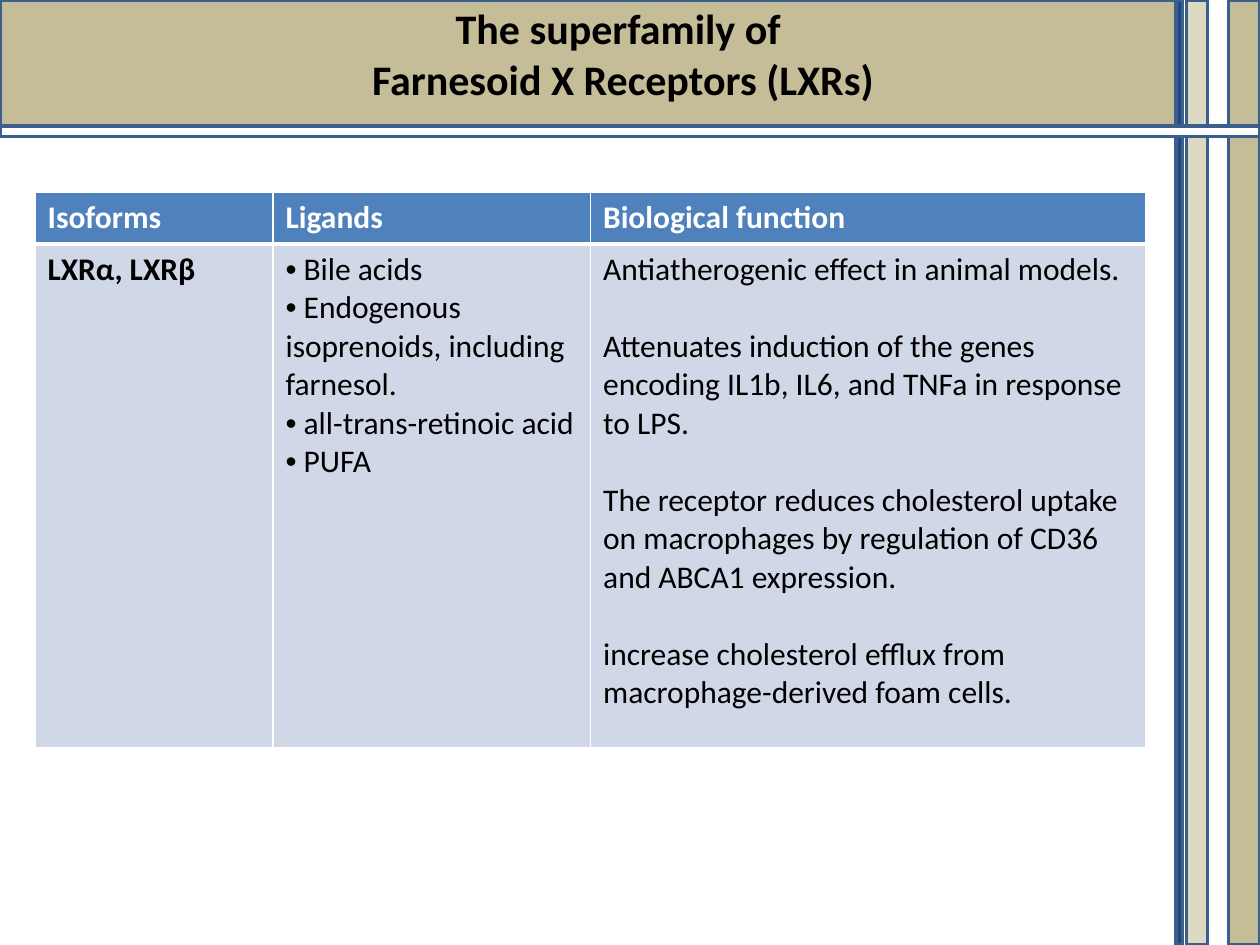
from typing import NamedTuple

from lxml.etree import SubElement
from pptx import Presentation
from pptx.dml.color import RGBColor
from pptx.enum.shapes import MSO_SHAPE
from pptx.enum.text import MSO_ANCHOR, MSO_AUTO_SIZE, PP_ALIGN
from pptx.oxml.ns import qn
from pptx.util import Pt

FONT = "Calibri"
BLACK = "000000"
WHITE = "FFFFFF"
OUTLINE = "3A5F8C"
HEADER_FILL = "4F81BD"
BODY_FILL = "D0D8E8"


class Bar(NamedTuple):
    left: float
    top: float
    width: float
    height: float
    fill: str


class Entry(NamedTuple):
    lines: list[str]
    bold: bool = False
    bulleted: bool = False
    gap: float = 0
    color: str = BLACK
    fill: str = BODY_FILL
    bottom: float = 1


BARS = [
    Bar(0, 0, 672, 72, "C4BD97"),
    Bar(702, 0, 18, 540, "C4BD97"),
    Bar(678, 0, 12, 540, "DDD9C3"),
    Bar(672, 0, 3.6, 540, "1F497D"),
    Bar(0, 72, 720, 6, WHITE),
]
COLUMN_WIDTHS = [136, 181.5, 317.5]
ROW_HEIGHTS = [29.5, 288]
HEADINGS = [
    Entry([heading], bold=True, color=WHITE, fill=HEADER_FILL, bottom=3)
    for heading in ("Isoforms", "Ligands", "Biological function")
]
RECEPTORS = [
    Entry(["LXRα, LXRβ"], bold=True),
    Entry(
        [
            " Bile acids",
            " Endogenous isoprenoids, including farnesol.",
            " all-trans-retinoic acid",
            " PUFA",
        ],
        bulleted=True,
    ),
    Entry(
        [
            "Antiatherogenic effect in animal models.",
            "Attenuates induction of the genes encoding IL1b, IL6, and TNFa in response to LPS.",
            "The receptor reduces cholesterol uptake on macrophages by regulation of CD36 and ABCA1 expression.",
            "increase cholesterol efflux from macrophage-derived foam cells.",
        ],
        gap=22,
    ),
]


def rgb(value: str) -> RGBColor:
    return RGBColor.from_string(value)


def format_font(font, size: float, color: str, bold: bool) -> None:
    font.name = FONT
    font.size = Pt(size)
    font.bold = bold
    font.color.rgb = rgb(color)


def draw_bar(slide, bar: Bar) -> None:
    band = slide.shapes.add_shape(
        MSO_SHAPE.RECTANGLE, Pt(bar.left), Pt(bar.top), Pt(bar.width), Pt(bar.height)
    )
    band.shadow.inherit = False
    band.fill.solid()
    band.fill.fore_color.rgb = rgb(bar.fill)
    band.line.color.rgb = rgb(OUTLINE)
    band.line.width = Pt(2)


def draw_title(slide) -> None:
    title = slide.shapes.title
    slide.shapes._spTree.append(title._element)
    title.left, title.top, title.width, title.height = Pt(204), Pt(-2), Pt(304), Pt(65.5)
    frame = title.text_frame
    frame.text = "The superfamily of \nFarnesoid X Receptors (LXRs)"
    frame.word_wrap = False
    frame.auto_size = MSO_AUTO_SIZE.NONE
    frame.vertical_anchor = MSO_ANCHOR.TOP
    for paragraph in frame.paragraphs:
        paragraph.alignment = PP_ALIGN.CENTER
        paragraph.space_before = Pt(0)
        format_font(paragraph.runs[0].font, 24, BLACK, True)


def add_borders(cell, bottom: float) -> None:
    properties = cell._tc.get_or_add_tcPr()
    for side, width in (("L", 1), ("R", 1), ("T", 1), ("B", bottom)):
        border = SubElement(properties, qn(f"a:ln{side}"), w=str(Pt(width)))
        SubElement(SubElement(border, qn("a:solidFill")), qn("a:srgbClr"), val=WHITE)


def add_bullet(paragraph) -> None:
    properties = paragraph._p.get_or_add_pPr()
    properties.set("marL", "0")
    properties.set("indent", "0")
    SubElement(properties, qn("a:buFont"), typeface="Arial")
    SubElement(properties, qn("a:buChar"), char="•")


def fill_cell(cell, entry: Entry) -> None:
    add_borders(cell, entry.bottom)
    cell.fill.solid()
    cell.fill.fore_color.rgb = rgb(entry.fill)
    cell.text_frame.text = "\n".join(entry.lines)
    for index, paragraph in enumerate(cell.text_frame.paragraphs):
        if index and entry.gap:
            paragraph.space_before = Pt(entry.gap)
        if entry.bulleted:
            add_bullet(paragraph)
        format_font(paragraph.runs[0].font, 18, entry.color, entry.bold)


def draw_table(slide, rows: list[list[Entry]]) -> None:
    table = slide.shapes.add_table(
        len(rows), len(COLUMN_WIDTHS), Pt(20), Pt(110),
        Pt(sum(COLUMN_WIDTHS)), Pt(sum(ROW_HEIGHTS)),
    ).table
    for column, width in zip(table.columns, COLUMN_WIDTHS):
        column.width = Pt(width)
    for row, height, entries in zip(table.rows, ROW_HEIGHTS, rows):
        row.height = Pt(height)
        for cell, entry in zip(row.cells, entries):
            fill_cell(cell, entry)


def main() -> None:
    presentation = Presentation()
    presentation.slide_width, presentation.slide_height = Pt(720), Pt(540)
    slide = presentation.slides.add_slide(presentation.slide_layouts[5])
    for bar in BARS:
        draw_bar(slide, bar)
    draw_table(slide, [HEADINGS, RECEPTORS])
    draw_title(slide)
    presentation.save("out.pptx")


if __name__ == "__main__":
    main()
